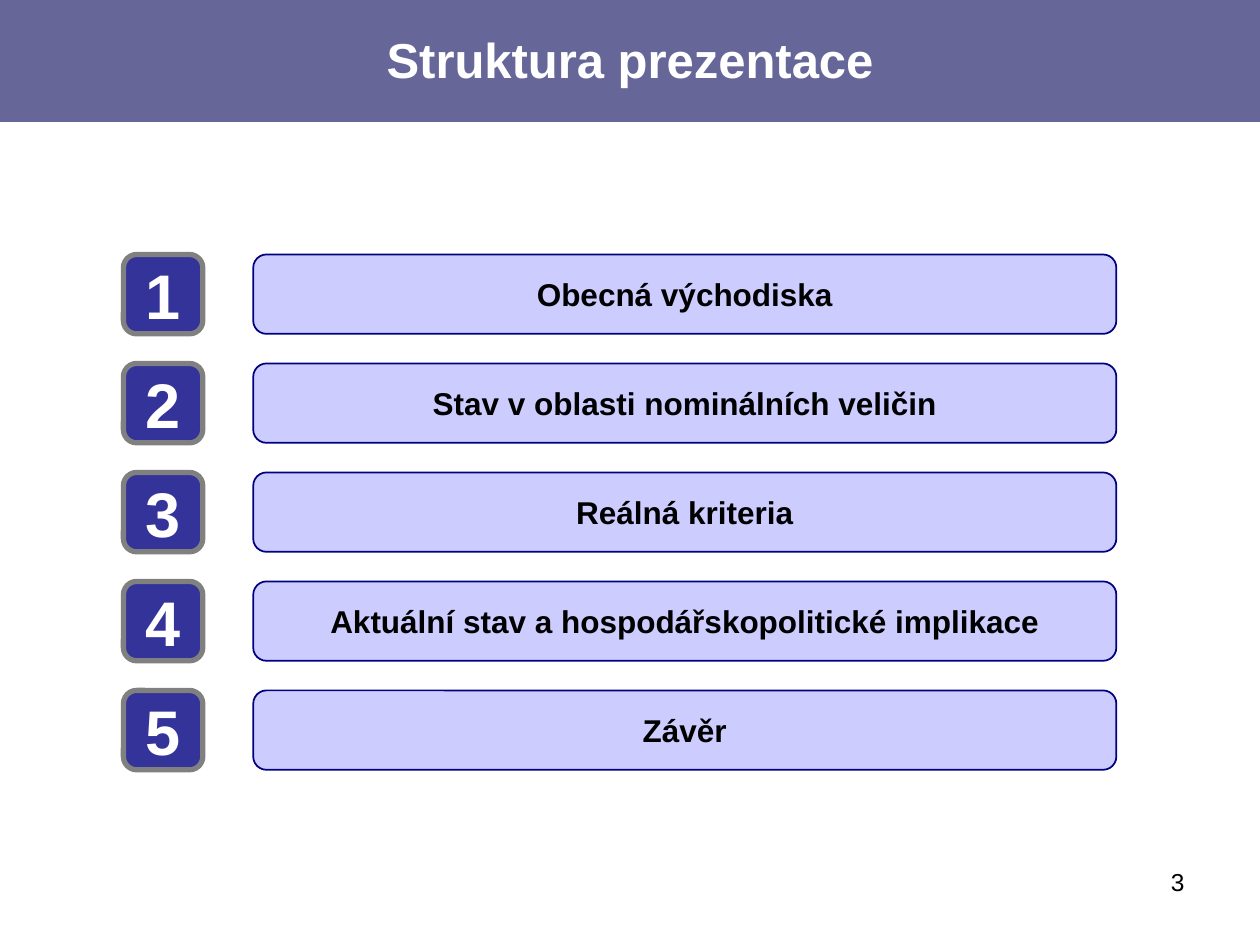
from dataclasses import dataclass

import pptx
import pptx.dml.color
import pptx.enum.shapes
import pptx.enum.text
import pptx.util
from pptx.dml.color import RGBColor
from pptx.util import Inches

WHITE = RGBColor(0xFF, 0xFF, 0xFF)
BLACK = RGBColor(0x00, 0x00, 0x00)
BAND = RGBColor(0x66, 0x66, 0x99)
INDIGO = RGBColor(0x33, 0x33, 0x99)
GRAY = RGBColor(0x80, 0x80, 0x80)
LAVENDER = RGBColor(0xCC, 0xCC, 0xFF)
NAVY = RGBColor(0x00, 0x00, 0x80)

SHAPE = pptx.enum.shapes.MSO_SHAPE
ALIGN = pptx.enum.text.PP_ALIGN
ANCHOR = pptx.enum.text.MSO_ANCHOR

TOPICS = [
    "Obecná východiska",
    "Stav v oblasti nominálních veličin",
    "Reálná kriteria",
    "Aktuální stav a hospodářskopolitické implikace",
    "Závěr",
]
FIRST_TOP = 2.02
ROW_STEP = 0.865
ROW_HEIGHT = 0.63


@dataclass(frozen=True)
class BoxStyle:
    left: float
    width: float
    fill: RGBColor
    line: RGBColor
    line_width: float
    text_size: float
    text_color: RGBColor


NUMBER = BoxStyle(0.98, 0.63, INDIGO, GRAY, 3, 36, WHITE)
TOPIC = BoxStyle(2.01, 6.85, LAVENDER, NAVY, 1, 18, BLACK)


def write_text(sp, text: str, size: float, color: RGBColor, bold: bool = True,
               align=ALIGN.CENTER, anchor=ANCHOR.MIDDLE) -> None:
    tf = sp.text_frame
    tf.word_wrap = True
    tf.vertical_anchor = anchor
    p = tf.paragraphs[0]
    p.alignment = align
    r = p.add_run()
    r.text = text
    r.font.name = "Arial"
    r.font.size = pptx.util.Pt(size)
    r.font.bold = bold
    r.font.color.rgb = color


def paint(sp, fill: RGBColor, line: RGBColor, width: float) -> None:
    sp.shadow.inherit = False
    sp.fill.solid()
    sp.fill.fore_color.rgb = fill
    sp.line.color.rgb = line
    sp.line.width = pptx.util.Pt(width)


def add_box(s, style: BoxStyle, top: float, text: str) -> None:
    sp = s.shapes.add_shape(SHAPE.ROUNDED_RECTANGLE, Inches(style.left), Inches(top),
                            Inches(style.width), Inches(ROW_HEIGHT))
    paint(sp, style.fill, style.line, style.line_width)
    write_text(sp, text, style.text_size, style.text_color)


def add_heading(s, text: str) -> None:
    """Place the title over a full-width band."""
    title = s.shapes.title
    title.left, title.top = Inches(0.2), Inches(-0.03)
    title.width, title.height = Inches(9.6), Inches(0.99)
    write_text(title, text, 28, WHITE)
    band = s.shapes.add_shape(SHAPE.RECTANGLE, 0, title.top, Inches(10), title.height)
    paint(band, BAND, BAND, 0.75)
    title.element.addprevious(band.element)


def main() -> None:
    prs = pptx.Presentation()
    prs.slide_width, prs.slide_height = Inches(10), Inches(7.5)
    s = prs.slides.add_slide(prs.slide_layouts[5])
    add_heading(s, "Struktura prezentace")
    for i, topic in enumerate(TOPICS):
        top = FIRST_TOP + i * ROW_STEP
        add_box(s, NUMBER, top, str(i + 1))
        add_box(s, TOPIC, top, topic)
    page = s.shapes.add_textbox(Inches(7.17), Inches(6.83), Inches(2.33), Inches(0.52))
    write_text(page, "3", 14, BLACK, bold=False, align=ALIGN.RIGHT, anchor=ANCHOR.TOP)
    prs.save("out.pptx")


if __name__ == "__main__":
    main()
